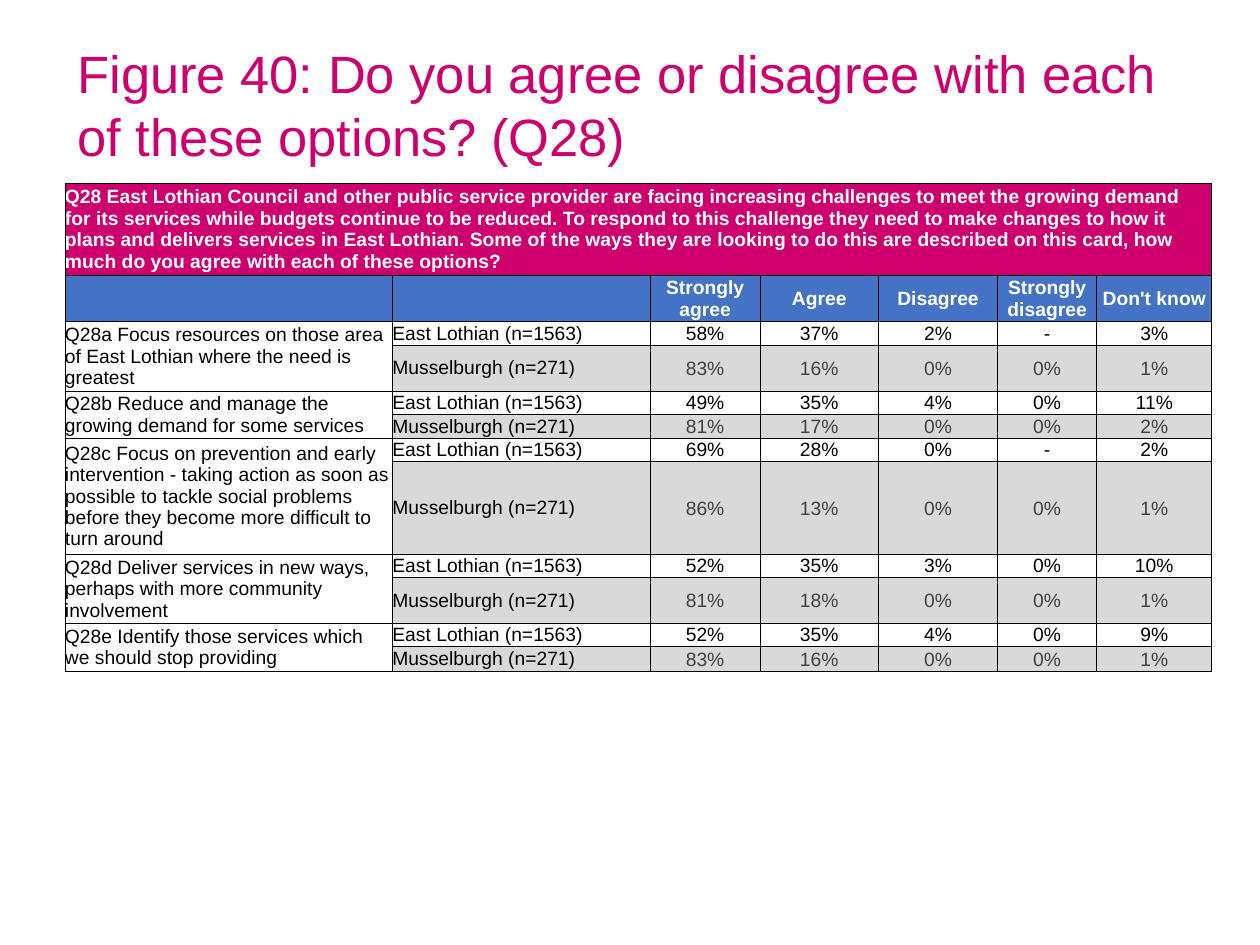
"""Build the Figure 40 slide: agreement with five service options, by area."""
from lxml.etree import SubElement
from pptx import Presentation
from pptx.dml.color import RGBColor
from pptx.enum.text import MSO_ANCHOR, PP_ALIGN
from pptx.oxml.ns import qn
from pptx.util import Cm, Pt

MAGENTA = RGBColor(0xCD, 0x00, 0x6E)
BLUE = RGBColor(0x44, 0x72, 0xC4)
GREY = RGBColor(0xD9, 0xD9, 0xD9)
DARK_GREY = RGBColor(0x40, 0x40, 0x40)
WHITE = RGBColor(0xFF, 0xFF, 0xFF)
BLACK = RGBColor(0x00, 0x00, 0x00)

TITLE = "Figure 40: Do you agree or disagree with each of these options? (Q28)"
QUESTION = (
    "Q28 East Lothian Council and other public service provider are facing increasing "
    "challenges to meet the growing demand for its services while budgets continue to be "
    "reduced. To respond to this challenge they need to make changes to how it plans and "
    "delivers services in East Lothian. Some of the ways they are looking to do this are "
    "described on this card, how much do you agree with each of these options?"
)
HEADINGS = ["", "", "Strongly agree", "Agree", "Disagree", "Strongly disagree", "Don't know"]
AREAS = ["East Lothian (n=1563)", "Musselburgh (n=271)"]
OPTIONS = [
    ("Q28a Focus resources on those area of East Lothian where the need is greatest",
     ["58%", "37%", "2%", "-", "3%"], ["83%", "16%", "0%", "0%", "1%"]),
    ("Q28b Reduce and manage the growing demand for some services",
     ["49%", "35%", "4%", "0%", "11%"], ["81%", "17%", "0%", "0%", "2%"]),
    ("Q28c Focus on prevention and early intervention - taking action as soon as possible "
     "to tackle social problems before they become more difficult to turn around",
     ["69%", "28%", "0%", "-", "2%"], ["86%", "13%", "0%", "0%", "1%"]),
    ("Q28d Deliver services in new ways, perhaps with more community involvement",
     ["52%", "35%", "3%", "0%", "10%"], ["81%", "18%", "0%", "0%", "1%"]),
    ("Q28e Identify those services which we should stop providing",
     ["52%", "35%", "4%", "0%", "9%"], ["83%", "16%", "0%", "0%", "1%"]),
]
COLUMN_WIDTHS = [6.6, 5.2, 2.21, 2.39, 2.4, 2.0, 2.32]
MINIMUM_ROW_HEIGHT = 0.1
LEFT = 1.31
TABLE_TEXT_SIZE = 11


def style_font(font, size, color, bold=False):
    font.name, font.size, font.bold = "Arial", Pt(size), bold
    font.color.rgb = color


def add_borders(cell):
    properties = cell._tc.get_or_add_tcPr()
    for position, side in enumerate(("a:lnL", "a:lnR", "a:lnT", "a:lnB")):
        line = properties.makeelement(qn(side), {"w": str(Pt(0.5))})
        properties.insert(position, line)
        SubElement(SubElement(line, qn("a:solidFill")), qn("a:srgbClr"), val=str(BLACK))


def write_cell(cell, text, fill, color=BLACK, bold=False, centred=False, inset=0):
    cell.margin_left = cell.margin_right = cell.margin_top = Cm(inset)
    cell.margin_bottom = 0
    cell.vertical_anchor = MSO_ANCHOR.MIDDLE
    cell.fill.solid()
    cell.fill.fore_color.rgb = fill
    cell.text = text
    paragraph = cell.text_frame.paragraphs[0]
    paragraph.alignment = PP_ALIGN.CENTER if centred else PP_ALIGN.LEFT
    style_font(paragraph.font, TABLE_TEXT_SIZE, color, bold)
    if not text:
        for ending in paragraph._p.findall(qn("a:endParaRPr")):
            paragraph._p.remove(ending)
        SubElement(paragraph._p, qn("a:endParaRPr"), sz=str(TABLE_TEXT_SIZE * 100))


def add_title(slide):
    frame = slide.shapes.add_textbox(Cm(LEFT), Cm(0.53), Cm(22.86), Cm(3.15)).text_frame
    frame.word_wrap = True
    frame.vertical_anchor = MSO_ANCHOR.MIDDLE
    frame.text = TITLE
    style_font(frame.paragraphs[0].font, 30, MAGENTA)


def add_results(slide):
    row_count = 2 + len(OPTIONS) * len(AREAS)
    table = slide.shapes.add_table(
        row_count, len(HEADINGS), Cm(LEFT), Cm(3.69),
        Cm(sum(COLUMN_WIDTHS)), Cm(MINIMUM_ROW_HEIGHT * row_count)).table
    for column, width in zip(table.columns, COLUMN_WIDTHS):
        column.width = Cm(width)
    for cell in table.iter_cells():
        write_cell(cell, "", WHITE)
        add_borders(cell)

    question_cell = table.cell(0, 0)
    question_cell.merge(table.cell(0, len(HEADINGS) - 1))
    write_cell(question_cell, QUESTION, MAGENTA, WHITE, bold=True)
    question_cell.margin_right = Cm(0.1)
    for column, heading in enumerate(HEADINGS):
        write_cell(table.cell(1, column), heading, BLUE, WHITE, bold=True, centred=True)

    area_styles = [(WHITE, BLACK, 0), (GREY, DARK_GREY, 0.02)]
    for number, (option, *area_shares) in enumerate(OPTIONS):
        top = 2 + number * len(AREAS)
        table.cell(top, 0).merge(table.cell(top + 1, 0))
        write_cell(table.cell(top, 0), option, WHITE)
        for row, (area, shares, style) in enumerate(zip(AREAS, area_shares, area_styles), top):
            fill, color, inset = style
            write_cell(table.cell(row, 1), area, fill)
            for column, share in enumerate(shares, 2):
                write_cell(table.cell(row, column), share, fill, color,
                           centred=True, inset=inset)


def main():
    presentation = Presentation()
    presentation.slide_width, presentation.slide_height = Cm(25.4), Cm(19.05)
    slide = presentation.slides.add_slide(presentation.slide_layouts[6])
    add_title(slide)
    add_results(slide)
    presentation.save("out.pptx")


if __name__ == "__main__":
    main()
